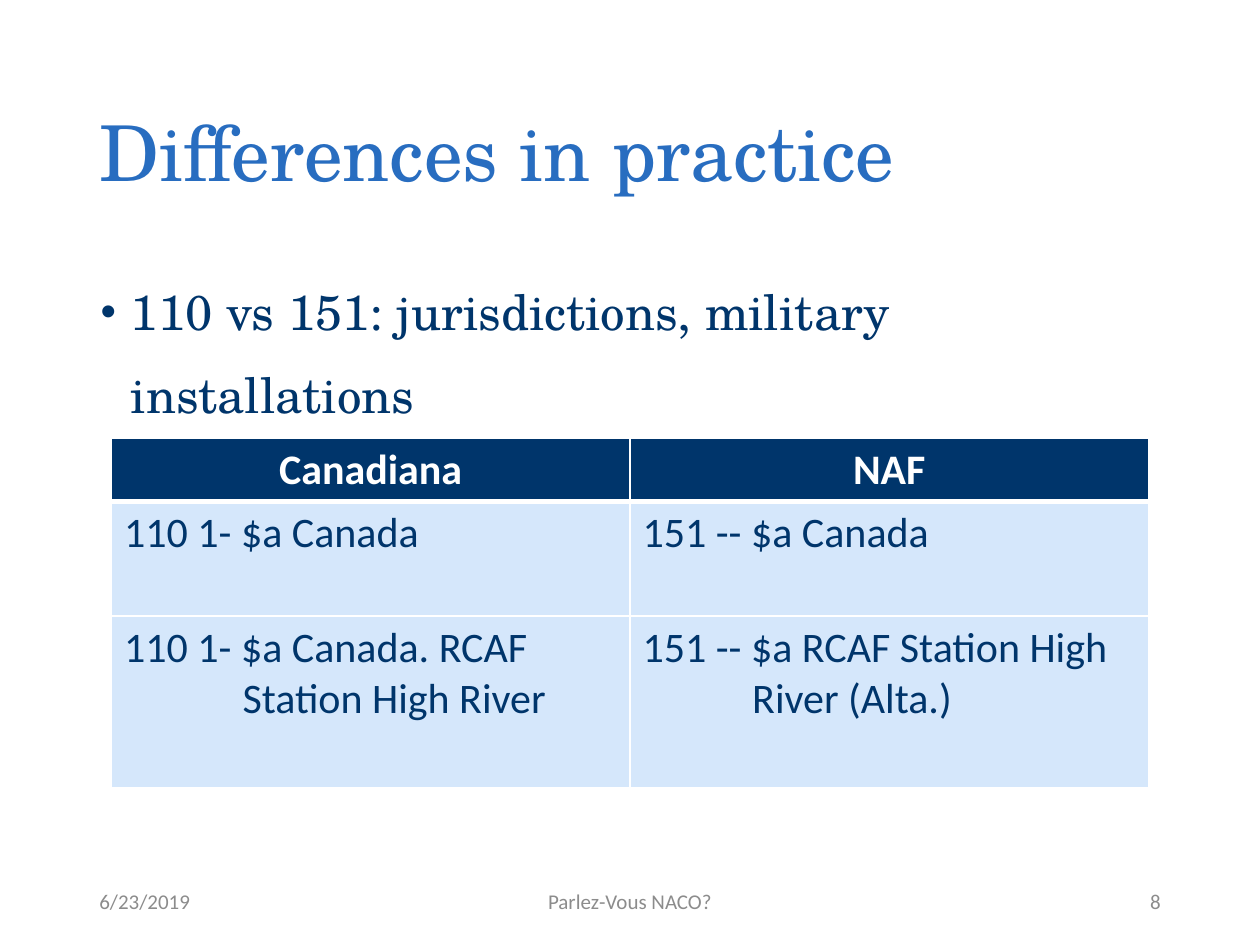
from lxml import etree
from pptx import Presentation
from pptx import util as u
from pptx.dml.color import RGBColor
from pptx.enum import text
from pptx.oxml.ns import qn

NAVY, BLUE, PALE, GREY, WHITE = "00356B", "286DC0", "D5E7FB", "8C8C8C", "FFFFFF"
SERIF, SANS = "TeX Gyre Schola", "Calibri"
LEFT, CENTER, RIGHT = text.PP_ALIGN.LEFT, text.PP_ALIGN.CENTER, text.PP_ALIGN.RIGHT
TOP, MIDDLE = text.MSO_ANCHOR.TOP, text.MSO_ANCHOR.MIDDLE


def rgb(value):
    return RGBColor.from_string(value)


class Deck:
    """Holds the style and the current slide; positions are percent of the slide."""

    def __init__(self):
        self.prs = Presentation()
        self.prs.slide_width, self.prs.slide_height = u.Inches(10), u.Inches(7.5)
        self.s = self.prs.slides.add_slide(self.prs.slide_layouts[6])

    def x(self, share):
        return round(self.prs.slide_width * share / 100)

    def y(self, share):
        return round(self.prs.slide_height * share / 100)

    def run(self, p, words, size, font, color, bold=False):
        r = p.add_run()
        r.text = words
        r.font.size, r.font.name, r.font.bold = u.Pt(size), font, bold
        r.font.color.rgb = rgb(color)

    def hang(self, p, margin, indent):
        """Set left margin and first-line indent in inches."""
        pPr = p._p.get_or_add_pPr()
        pPr.set("marL", str(u.Inches(margin)))
        pPr.set("indent", str(u.Inches(indent)))
        return pPr

    def text(self, box, words, size, font, color, align=LEFT, anchor=MIDDLE, spacing=1.0):
        left, top, width, height = box
        sp = self.s.shapes.add_textbox(self.x(left), self.y(top), self.x(width), self.y(height))
        tf = sp.text_frame
        tf.word_wrap, tf.vertical_anchor = True, anchor
        p = tf.paragraphs[0]
        p.alignment, p.line_spacing = align, spacing
        self.run(p, words, size, font, color)
        return p

    def bullet(self, box, words, size, font, color, spacing):
        p = self.text(box, words, size, font, color, anchor=TOP, spacing=spacing)
        pPr = self.hang(p, 0.25, -0.24)
        etree.SubElement(pPr, qn("a:buSzPct"), val="90000")
        etree.SubElement(pPr, qn("a:buFont"), typeface="Arial")
        etree.SubElement(pPr, qn("a:buChar"), char="•")

    def borders(self, cell, **widths):
        """Draw white borders; widths in points keyed by side L, R, T, B."""
        tcPr = cell._tc.get_or_add_tcPr()
        for i, side in enumerate("LRTB"):
            ln = etree.Element(qn(f"a:ln{side}"), w=str(u.Pt(widths.get(side, 1))))
            fill = etree.SubElement(ln, qn("a:solidFill"))
            etree.SubElement(fill, qn("a:srgbClr"), val=WHITE)
            tcPr.insert(i, ln)

    def table(self, left, top, width, heights, rows, hangs):
        """Add a table with a header row; hangs maps (row, column) to a hanging indent."""
        cols = len(rows[0])
        tbl = self.s.shapes.add_table(len(rows), cols, self.x(left), self.y(top),
                                      self.x(width), self.y(sum(heights))).table
        tbl.horz_banding = False
        for col in tbl.columns:
            col.width = self.x(width / cols)
        for i, (height, row) in enumerate(zip(heights, rows)):
            tbl.rows[i].height = self.y(height)
            head = i == 0
            for j, words in enumerate(row):
                cell = tbl.cell(i, j)
                cell.fill.solid()
                cell.fill.fore_color.rgb = rgb(NAVY if head else PALE)
                self.borders(cell, B=3 if head else 1, T=3 if i == 1 else 1)
                p = cell.text_frame.paragraphs[0]
                p.alignment = CENTER if head else LEFT
                if (i, j) in hangs:
                    self.hang(p, hangs[i, j], -hangs[i, j])
                self.run(p, words, 24, SANS, WHITE if head else NAVY, head)


def main():
    d = Deck()
    margin, width = 6.9, 86.2
    d.text((margin, 5.33, width, 19.33), "Differences in practice", 44, SERIF, BLUE, spacing=1.2)
    d.bullet((margin, 26.67, width, 63.47),
             "110 vs 151: jurisdictions, military installations", 28, SERIF, NAVY, 1.4)
    d.table(8.85, 46.4, 82.3, (6.67, 12.13, 18.13), [
        ("Canadiana", "NAF"),
        ("110 1- $a Canada", "151 -- $a Canada"),
        ("110 1- $a Canada. RCAF Station High River",
         "151 -- $a RCAF Station High River (Alta.)"),
    ], {(2, 0): 0.94, (2, 1): 0.87})
    footers = [(margin, 22.5, "6/23/2019", LEFT),
               (33.1, 33.8, "Parlez-Vous NACO?", CENTER),
               (70.6, 22.5, "8", RIGHT)]
    for left, span, words, align in footers:
        d.text((left, 92.67, span, 5.33), words, 12, SANS, GREY, align)
    d.prs.save("out.pptx")


if __name__ == "__main__":
    main()
